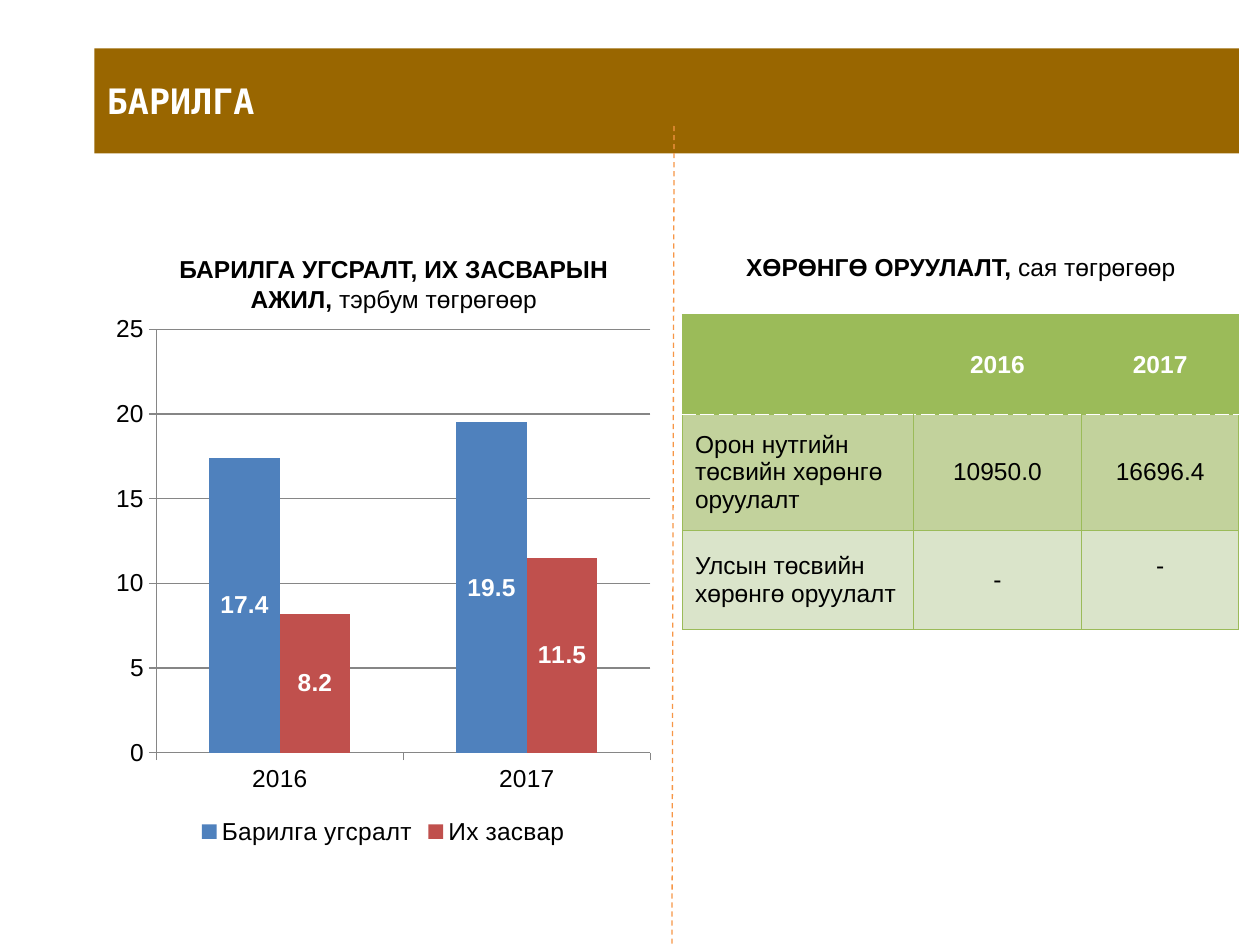
from lxml import etree
from pptx import Presentation
from pptx import util as u
from pptx.chart.data import CategoryChartData
from pptx.dml.color import RGBColor
from pptx.enum import chart as ch, dml, shapes, text
from pptx.oxml.ns import qn

BLACK = RGBColor(0, 0, 0)
WHITE = RGBColor(255, 255, 255)
BROWN = RGBColor(0x99, 0x66, 0x00)
ORANGE = RGBColor(0xF7, 0x96, 0x46)
BLUE = RGBColor(0x4F, 0x81, 0xBD)
RED = RGBColor(0xC0, 0x50, 0x4D)
GREY = RGBColor(0x86, 0x86, 0x86)
GREEN = RGBColor(0x9B, 0xBB, 0x59)
GREEN_MID = RGBColor(0xC2, 0xD2, 0x9C)
GREEN_PALE = RGBColor(0xDA, 0xE4, 0xCA)
WIDTH, HEIGHT = u.Inches(10), u.Inches(7.5)
COLUMN = WIDTH // 120
ROW = HEIGHT // 90


def place(left, top, width, height):
    return left * COLUMN, top * ROW, width * COLUMN, height * ROW


def format_font(font, size=14, name="Arial", color=BLACK, bold=False):
    font.size = u.Pt(size)
    font.name = name
    font.bold = bold
    font.color.rgb = color


def write(frame, *parts, align=text.PP_ALIGN.CENTER,
          anchor=text.MSO_ANCHOR.MIDDLE, **style):
    frame.word_wrap = True
    frame.vertical_anchor = anchor
    para = frame.paragraphs[0]
    para.alignment = align
    for words, bold in parts:
        span = para.add_run()
        span.text = words
        format_font(span.font, bold=bold, **style)


def add_heading(page, area, strong, plain):
    box = page.shapes.add_textbox(*area)
    write(box.text_frame, (strong, True), (plain, False),
          anchor=text.MSO_ANCHOR.BOTTOM)


def add_banner(page, area, title):
    banner = page.shapes.add_shape(shapes.MSO_SHAPE.RECTANGLE, *area)
    banner.shadow.inherit = False
    banner.fill.solid()
    banner.fill.fore_color.rgb = BROWN
    banner.line.fill.background()
    write(banner.text_frame, (title, True), align=text.PP_ALIGN.JUSTIFY,
          size=20, name="DejaVu Sans Mono", color=WHITE)


def add_divider(page, start, end):
    divider = page.shapes.add_connector(
        shapes.MSO_CONNECTOR.STRAIGHT, *start, *end)
    divider.line.color.rgb = ORANGE
    divider.line.width = u.Pt(0.75)
    divider.line.dash_style = dml.MSO_LINE.DASH
    etree.SubElement(divider._element.spPr, qn("a:effectLst"))


def add_columns(page, area, years, series):
    data = CategoryChartData()
    data.categories = years
    for name, values, color in series:
        data.add_series(name, values)
    chart = page.shapes.add_chart(
        ch.XL_CHART_TYPE.COLUMN_CLUSTERED, *area, data).chart
    format_font(chart.font)
    chart.has_title = False
    chart.has_legend = True
    chart.legend.position = ch.XL_LEGEND_POSITION.BOTTOM
    chart.legend.include_in_layout = False
    scale = chart.value_axis
    scale.minimum_scale, scale.maximum_scale, scale.major_unit = 0, 25, 5
    scale.major_gridlines.format.line.color.rgb = GREY
    for axis in (scale, chart.category_axis):
        axis.major_tick_mark = ch.XL_TICK_MARK.OUTSIDE
        axis.format.line.color.rgb = GREY
    plot = chart.plots[0]
    plot.gap_width, plot.overlap = 150, 0
    plot.vary_by_categories = False
    for bars, (name, values, color) in zip(plot.series, series):
        bars.format.fill.solid()
        bars.format.fill.fore_color.rgb = color
        labels = bars.data_labels
        labels.show_value = True
        labels.position = ch.XL_LABEL_POSITION.CENTER
        format_font(labels.font, color=WHITE, bold=True)


def add_border(cell, side, color, width=0.75, dash="solid"):
    line = etree.SubElement(cell._tc.get_or_add_tcPr(), qn(f"a:ln{side}"),
                            w=str(u.Pt(width)))
    if color is None:
        etree.SubElement(line, qn("a:noFill"))
        return
    fill = etree.SubElement(line, qn("a:solidFill"))
    etree.SubElement(fill, qn("a:srgbClr"), val=str(color))
    etree.SubElement(line, qn("a:prstDash"), val=dash)


def style_cell(cell, row, column, last_column):
    header = row == 0
    add_border(cell, "L", None if header and column else GREEN)
    add_border(cell, "R", None if header and column < last_column else GREEN)
    for side, edge in (("T", row), ("B", row + 1)):
        if edge == 1:
            add_border(cell, side, WHITE, 0.9, "sysDash")
        else:
            add_border(cell, side, GREEN)
    cell.fill.solid()
    cell.fill.fore_color.rgb = (GREEN, GREEN_MID, GREEN_PALE)[row]


def add_grid(page, area, widths, heights, rows):
    table = page.shapes.add_table(len(rows), len(widths), *area).table
    for column, width in zip(table.columns, widths):
        column.width = width * COLUMN
    for line, height in zip(table.rows, heights):
        line.height = u.Inches(height)
    for r, values in enumerate(rows):
        for c, value in enumerate(values):
            cell = table.cell(r, c)
            style_cell(cell, r, c, len(widths) - 1)
            cell.vertical_anchor = text.MSO_ANCHOR.MIDDLE
            if value:
                align = text.PP_ALIGN.CENTER if c else text.PP_ALIGN.LEFT
                write(cell.text_frame, (value, r == 0), align=align,
                      color=BLACK if r else WHITE)
                cell.vertical_anchor = text.MSO_ANCHOR.MIDDLE
    return table


def main():
    deck = Presentation()
    deck.slide_width, deck.slide_height = WIDTH, HEIGHT
    page = deck.slides.add_slide(deck.slide_layouts[6])
    add_heading(page, place(66, 19, 51, 8.4),
                "ХӨРӨНГӨ ОРУУЛАЛТ, ", "сая төгрөгөөр")
    add_columns(page, place(10, 29, 53, 52), ["2016", "2017"], [
        ("Барилга угсралт", (17.4, 19.5), BLUE),
        ("Их засвар", (8.2, 11.5), RED)])
    table = add_grid(
        page, place(65, 30, 53, 30), (22, 16, 15), (0.79, 0.92, 0.79), [
            ("", "2016", "2017"),
            ("Орон нутгийн төсвийн хөрөнгө оруулалт", "10950.0", "16696.4"),
            ("Улсын төсвийн хөрөнгө оруулалт", "-", "-")])
    table.cell(2, 2).margin_bottom = u.Inches(0.27)
    add_banner(page, place(9, 4.6, 109, 10), "БАРИЛГА")
    add_heading(page, place(12, 22, 51, 8.4),
                "БАРИЛГА УГСРАЛТ, ИХ ЗАСВАРЫН АЖИЛ, ", "тэрбум төгрөгөөр")
    add_divider(page, (u.Inches(5.35), 12 * ROW), (64 * COLUMN, HEIGHT))
    deck.save("out.pptx")


if __name__ == "__main__":
    main()
